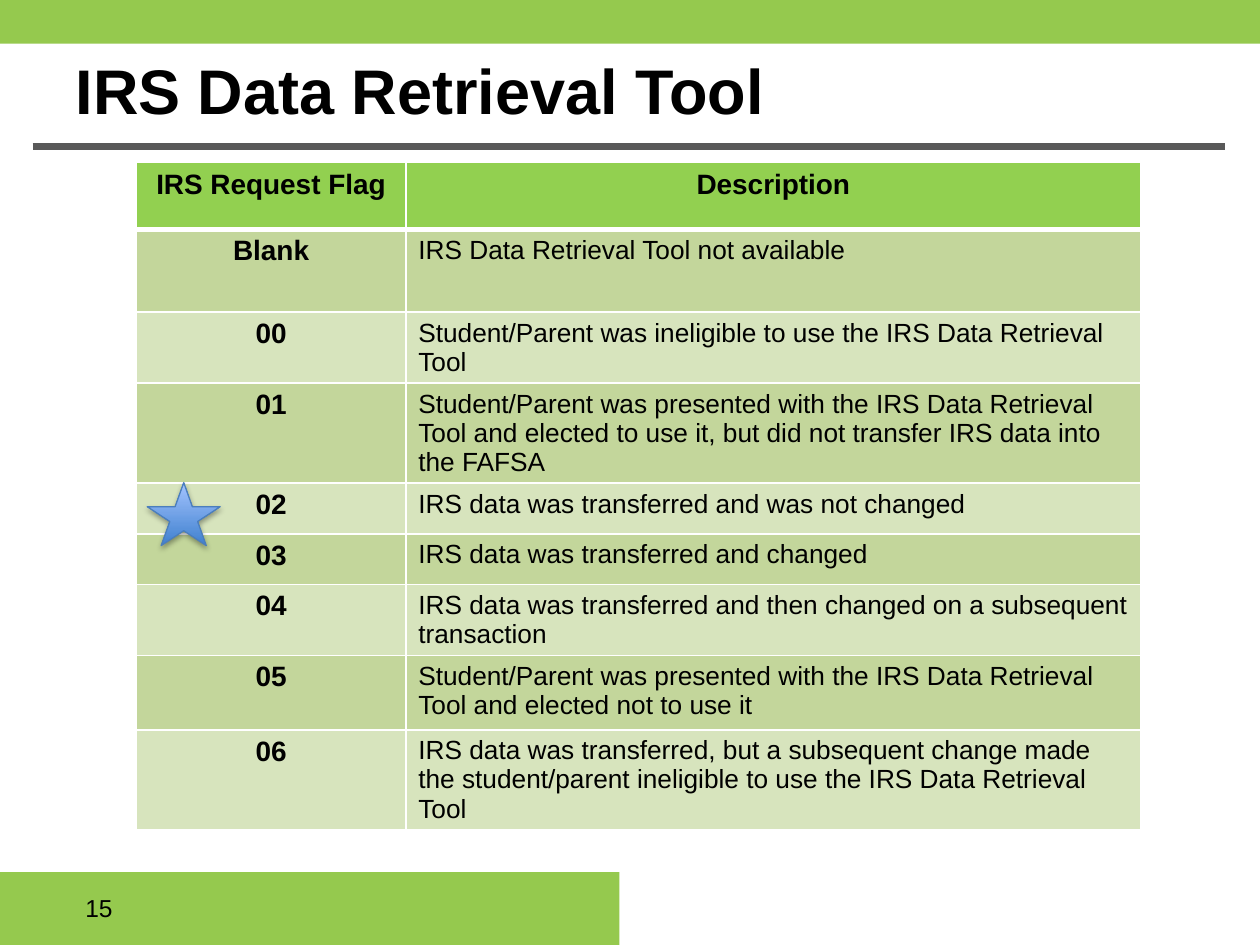
from lxml.etree import SubElement
from pptx import Presentation
from pptx.dml.color import RGBColor
from pptx.enum.shapes import MSO_CONNECTOR, MSO_SHAPE
from pptx.enum.text import MSO_ANCHOR, PP_ALIGN
from pptx.oxml import parse_xml
from pptx.oxml.ns import nsdecls, qn
from pptx.util import Cm, Pt

GREEN, HEADER_GREEN, BANDS = "95C94E", "92D050", ("C3D69B", "D7E4BD")
BLACK, WHITE, GREY = "000000", "FFFFFF", "595959"
ROWS = [
    ("IRS Request Flag", "Description", 1.34),
    ("Blank", "IRS Data Retrieval Tool not available", 1.67),
    ("00", "Student/Parent was ineligible to use the IRS Data Retrieval Tool", 1.43),
    ("01", "Student/Parent was presented with the IRS Data Retrieval Tool and "
           "elected to use it, but did not transfer IRS data into the FAFSA", 2.01),
    ("02", "IRS data was transferred and was not changed", 1.02),
    ("03", "IRS data was transferred and changed", 1.02),
    ("04", "IRS data was transferred and then changed on a subsequent transaction", 1.43),
    ("05", "Student/Parent was presented with the IRS Data Retrieval Tool and "
           "elected not to use it", 1.5),
    ("06", "IRS data was transferred, but a subsequent change made the "
           "student/parent ineligible to use the IRS Data Retrieval Tool", 2),
]


def rgb(value):
    return RGBColor.from_string(value)


def write(tf, text, size, bold=False, align=PP_ALIGN.LEFT):
    tf.text = text
    p = tf.paragraphs[0]
    p.alignment = align
    font = p.runs[0].font
    font.name, font.size, font.bold = "Arial", Pt(size), bold
    font.color.rgb = rgb(BLACK)


def add_bar(s, left, top, width, height):
    sp = s.shapes.add_shape(MSO_SHAPE.RECTANGLE, Cm(left), Cm(top), Cm(width), Cm(height))
    sp.shadow.inherit = False
    sp.fill.solid()
    sp.fill.fore_color.rgb = rgb(GREEN)
    sp.line.fill.background()


def add_rule(s, left, right, y):
    line = s.shapes.add_connector(MSO_CONNECTOR.STRAIGHT, Cm(left), Cm(y), Cm(right), Cm(y))
    line.line.color.rgb = rgb(GREY)
    line.line.width = Pt(4)
    SubElement(line._element.spPr, qn("a:effectLst"))


def set_title(s, text):
    title = s.shapes.title
    title.left, title.top, title.width, title.height = Cm(1.27), Cm(0.79), Cm(23.75), Cm(2.18)
    tf = title.text_frame
    tf.vertical_anchor = MSO_ANCHOR.TOP
    tf.margin_top = Cm(0.25)
    write(tf, text, 36, bold=True)


def set_borders(cell, top, bottom):
    """Draw white borders; top and bottom are widths in points."""
    tcPr = cell._tc.get_or_add_tcPr()
    widths = {"lnL": 1, "lnR": 1, "lnT": top, "lnB": bottom}
    for i, (tag, width) in enumerate(widths.items()):
        tcPr.insert(i, parse_xml(
            f'<a:{tag} {nsdecls("a")} w="{Pt(width)}"><a:solidFill>'
            f'<a:srgbClr val="{WHITE}"/></a:solidFill></a:{tag}>'))


def add_flag_table(s):
    height = sum(row[2] for row in ROWS)
    table = s.shapes.add_table(len(ROWS), 2, Cm(2.75), Cm(3.28), Cm(20.25), Cm(height)).table
    table.horz_banding = False
    table.columns[0].width, table.columns[1].width = Cm(5.43), Cm(14.82)
    for i, (flag, description, row_height) in enumerate(ROWS):
        table.rows[i].height = Cm(row_height)
        for j, text in enumerate((flag, description)):
            cell = table.cell(i, j)
            heading = i == 0 or j == 0
            write(cell.text_frame, text, 16 if heading else 15, heading,
                  PP_ALIGN.CENTER if heading else PP_ALIGN.LEFT)
            cell.fill.solid()
            cell.fill.fore_color.rgb = rgb(BANDS[(i - 1) % 2] if i else HEADER_GREEN)
            set_borders(cell, 3 if i == 1 else 1, 3 if i == 0 else 1)


def add_star(s):
    sp = s.shapes.add_shape(MSO_SHAPE.STAR_5_POINT, Cm(2.97), Cm(9.73), Cm(1.47), Cm(1.27))
    sp.fill.gradient()
    sp.fill.gradient_angle = 90
    for stop, position, color in zip(sp.fill.gradient_stops, (0, 1), ("3F80CE", "A4C4FF")):
        stop.position = position
        stop.color.rgb = rgb(color)
    sp.line.color.rgb = rgb("4B7EBC")
    sp.line.width = Pt(0.75)
    sp._element.spPr.append(parse_xml(
        f'<a:effectLst {nsdecls("a")}><a:outerShdw blurRad="{Pt(3.1)}" dist="{Pt(1.8)}" '
        f'dir="5400000" rotWithShape="0"><a:srgbClr val="{BLACK}"><a:alpha val="35000"/>'
        '</a:srgbClr></a:outerShdw></a:effectLst>'))


def add_page_number(s, number):
    tf = s.shapes.add_textbox(Cm(1.47), Cm(17.78), Cm(5.92), Cm(1.02)).text_frame
    tf.word_wrap = True
    tf.vertical_anchor = MSO_ANCHOR.MIDDLE
    write(tf, number, 14)


def main():
    prs = Presentation()
    prs.slide_width, prs.slide_height = Cm(25.4), Cm(19.05)
    s = prs.slides.add_slide(prs.slide_layouts[5])
    add_bar(s, 0, 17.58, 12.49, 1.49)
    add_bar(s, -0.04, 0, 25.48, 0.88)
    add_rule(s, 0.66, 24.69, 2.95)
    set_title(s, "IRS Data Retrieval Tool")
    add_flag_table(s)
    add_star(s)
    add_page_number(s, "15")
    prs.save("out.pptx")


if __name__ == "__main__":
    main()
